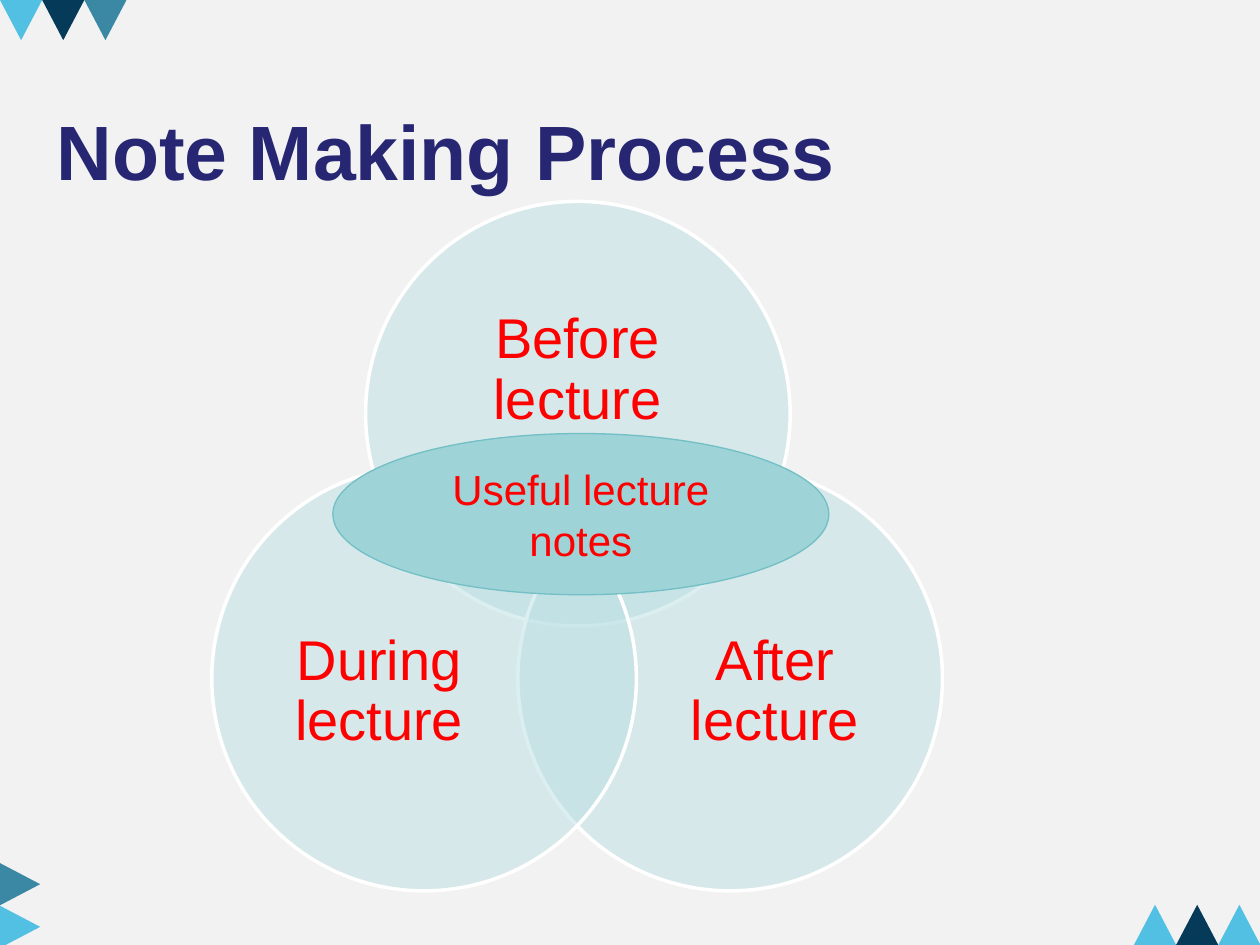
from lxml import etree
from pptx import Presentation
from pptx import util as u
from pptx.dml.color import RGBColor
from pptx.enum import shapes, text
from pptx.oxml.ns import qn

COLOURS = {
    "background": "F2F2F2", "sky": "51C0E3", "teal": "3B88A5", "navy": "063A59",
    "title": "262673", "label": "FF0000", "circle": "BBE0E3", "outline": "FFFFFF",
    "centre": "9ED3D7", "centre line": "72BFC5",
}


def add_filled(kind, left, top, width, height, colour, line=None, line_width=0):
    shape = slide.shapes.add_shape(kind, u.Cm(left), u.Cm(top), u.Cm(width), u.Cm(height))
    shape.shadow.inherit = False
    shape.fill.solid()
    shape.fill.fore_color.rgb = RGBColor.from_string(COLOURS[colour])
    if line:
        shape.line.color.rgb = RGBColor.from_string(COLOURS[line])
        shape.line.width = u.Pt(line_width)
    else:
        shape.line.fill.background()
    return shape


def write(shape, words, size, colour, alignment, bold=False):
    frame = shape.text_frame
    frame.text = words
    frame.word_wrap = True
    frame.vertical_anchor = text.MSO_ANCHOR.MIDDLE
    paragraph = frame.paragraphs[0]
    paragraph.alignment = alignment
    font = paragraph.runs[0].font
    font.name = "Arial"
    font.size = u.Pt(size)
    font.bold = bold
    font.color.rgb = RGBColor.from_string(COLOURS[colour])
    return paragraph


presentation = Presentation()
presentation.slide_width = u.Cm(25.4)
presentation.slide_height = u.Cm(19.05)
slide = presentation.slides.add_slide(presentation.slide_layouts[6])
slide.background.fill.solid()
slide.background.fill.fore_color.rgb = RGBColor.from_string(COLOURS["background"])

# Corner triangles: first left, first top, step across, step down, rotation, colours
triangle_width, triangle_height = 0.85, 0.81
triangle_rows = [
    (-0.02, 17.42, 0, 0.86, 90, ["teal", "sky"]),
    (0, 0, 0.85, 0, 180, ["sky", "navy", "teal"]),
    (22.86, 18.24, 0.85, 0, 0, ["sky", "navy", "sky"]),
]
for left, top, step_x, step_y, rotation, row_colours in triangle_rows:
    for index, colour in enumerate(row_colours):
        triangle = add_filled(shapes.MSO_SHAPE.ISOSCELES_TRIANGLE,
                              left + index * step_x, top + index * step_y,
                              triangle_width, triangle_height, colour)
        triangle.rotation = rotation

# Title
title = slide.shapes.add_textbox(u.Cm(0.89), u.Cm(1.73), u.Cm(24), u.Cm(2.59))
write(title, "Note Making Process", 44, "title", text.PP_ALIGN.LEFT, bold=True)

# Overlapping circles, each with its label: circle left, top, then label box
diameter = 8.56
stages = [
    ("Before lecture", 7.37, 4.06, (8.51, 5.56, 6.27, 3.84)),
    ("After lecture", 10.44, 9.4, (13.06, 11.61, 5.13, 4.7)),
    ("During lecture", 4.27, 9.4, (5.08, 11.61, 5.13, 4.7)),
]
for words, left, top, label_box in stages:
    circle = add_filled(shapes.MSO_SHAPE.OVAL, left, top, diameter, diameter,
                        "circle", "outline", 2)
    fill_colour = circle.fill._xPr.find(qn("a:solidFill"))[0]
    etree.SubElement(fill_colour, qn("a:alpha"), val="50000")

    label = slide.shapes.add_textbox(*[u.Cm(length) for length in label_box])
    frame = label.text_frame
    frame.margin_left = frame.margin_right = frame.margin_top = frame.margin_bottom = 0
    paragraph = write(label, words, 32, "label", text.PP_ALIGN.CENTER)
    paragraph.line_spacing = 0.9

# Shared result in the middle
result = add_filled(shapes.MSO_SHAPE.OVAL, 6.71, 8.74, 10, 3.25,
                    "centre", "centre line", 0.75)
write(result, "Useful lecture notes", 24, "label", text.PP_ALIGN.CENTER)

presentation.save("out.pptx")
